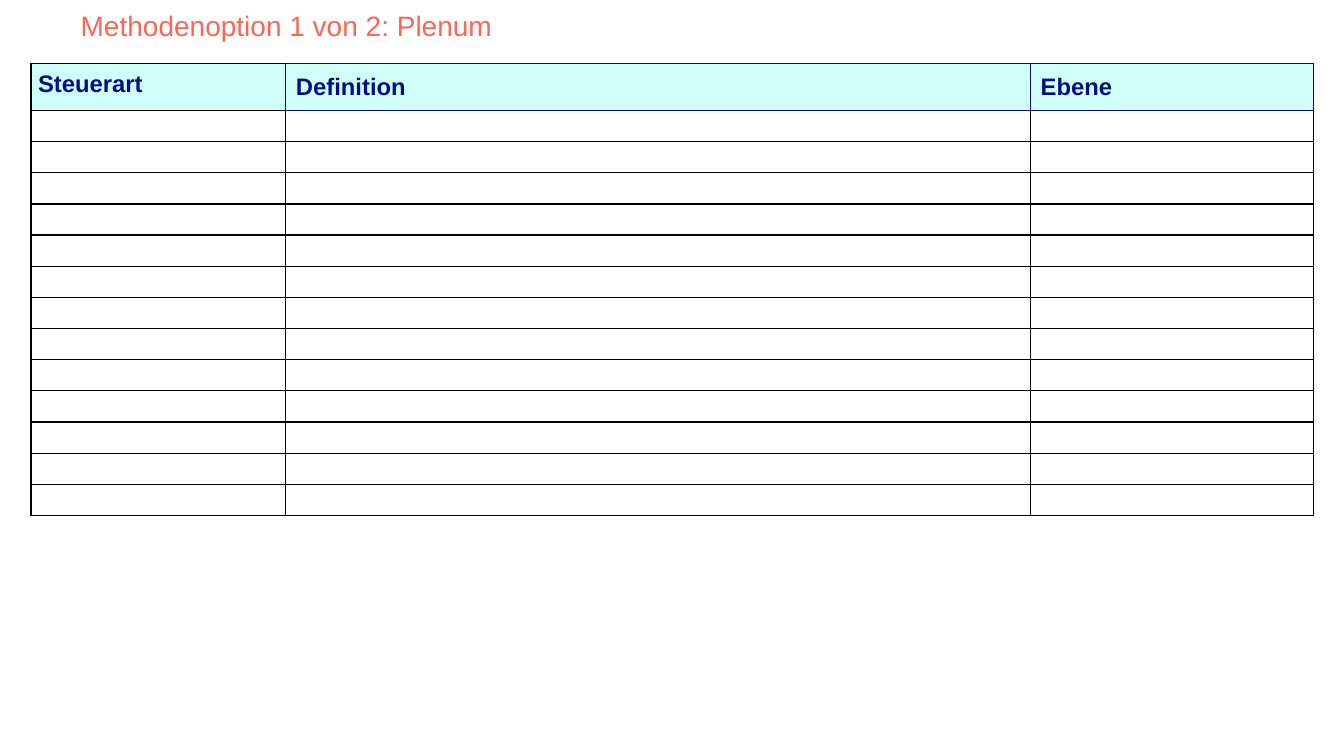
from lxml.etree import SubElement
from pptx import Presentation
from pptx.dml.color import RGBColor
from pptx.enum.text import MSO_ANCHOR, MSO_AUTO_SIZE, PP_ALIGN
from pptx.oxml.ns import qn
from pptx.util import Pt

COLORS = {"coral": "FF6555", "navy": "000D86", "mint": "D0FFF9", "black": "000000"}
FONT = "Arial"
HEADINGS = ["Steuerart", "Definition", "Ebene"]
COLUMN_WIDTHS = [182, 532, 202]
HEADER_HEIGHT = 33.3
TAX_ROWS = 13


def write_text(frame, text, size, color, bold=False, spacing=1.0):
    para = frame.paragraphs[0]
    para.alignment = PP_ALIGN.LEFT
    para.line_spacing = spacing
    span = para.add_run()
    span.text = text
    span.font.name = FONT
    span.font.size = Pt(size)
    span.font.bold = bold
    span.font.color.rgb = RGBColor.from_string(COLORS[color])


def set_borders(cell, edges):
    """Draw the borders given as a dict of side to (colour, width)."""
    properties = cell._tc.get_or_add_tcPr()
    for side in "LRTB":
        color, width = edges[side]
        line = SubElement(properties, qn(f"a:ln{side}"), w=str(Pt(width)))
        fill = SubElement(line, qn("a:solidFill"))
        SubElement(fill, qn("a:srgbClr"), val=COLORS[color])


def set_margins(cell, horizontal, vertical):
    cell.margin_left = cell.margin_right = Pt(horizontal)
    cell.margin_top = cell.margin_bottom = Pt(vertical)


def cell_edges(row, column):
    thick, thin = ("black", 1), ("navy", 0.75)
    if row == 0 and column > 0:
        return dict.fromkeys("LRTB", thin)
    edges = dict.fromkeys("LRTB", thick)
    if row == 0:
        edges["R"] = thin
    elif row == 1 and column > 0:
        edges["T"] = thin
    return edges


def add_heading(page, left, top, width, height):
    box = page.shapes.title
    box.left, box.top, box.width, box.height = Pt(left), Pt(top), Pt(width), Pt(height)
    frame = box.text_frame
    frame.word_wrap = True
    frame.auto_size = MSO_AUTO_SIZE.NONE
    frame.vertical_anchor = MSO_ANCHOR.TOP
    write_text(frame, "Methodenoption 1 von 2: Plenum", size=20, color="coral", spacing=0.9)


def add_tax_table(page, left, top, width, height):
    table = page.shapes.add_table(TAX_ROWS + 1, len(HEADINGS),
                                  Pt(left), Pt(top), Pt(width), Pt(height)).table
    table.horz_banding = False
    for column, share in zip(table.columns, COLUMN_WIDTHS):
        column.width = Pt(width * share / sum(COLUMN_WIDTHS))
    for index, row in enumerate(table.rows):
        row.height = Pt((height - HEADER_HEIGHT) / TAX_ROWS if index else HEADER_HEIGHT)
        for position, cell in enumerate(row.cells):
            set_borders(cell, cell_edges(index, position))
            if index == 0:
                # Header row
                margin = 7.2 if position else 5
                set_margins(cell, margin, margin)
                cell.fill.solid()
                cell.fill.fore_color.rgb = RGBColor.from_string(COLORS["mint"])
                write_text(cell.text_frame, HEADINGS[position], size=17, color="navy", bold=True)
            else:
                # Empty rows to fill in: small type keeps them low
                set_margins(cell, 5, 2)
                cell.fill.background()
                ending = SubElement(cell.text_frame.paragraphs[0]._p, qn("a:endParaRPr"), sz="1000")
                SubElement(ending, qn("a:latin"), typeface=FONT)


def main():
    deck = Presentation()
    deck.slide_width, deck.slide_height = Pt(960), Pt(540)
    page = deck.slides.add_slide(deck.slide_layouts.get_by_name("Title Only"))
    add_heading(page, left=50.4, top=5, width=545, height=38)
    add_tax_table(page, left=22.2, top=45.4, width=916, height=322.7)
    deck.save("out.pptx")


if __name__ == "__main__":
    main()
